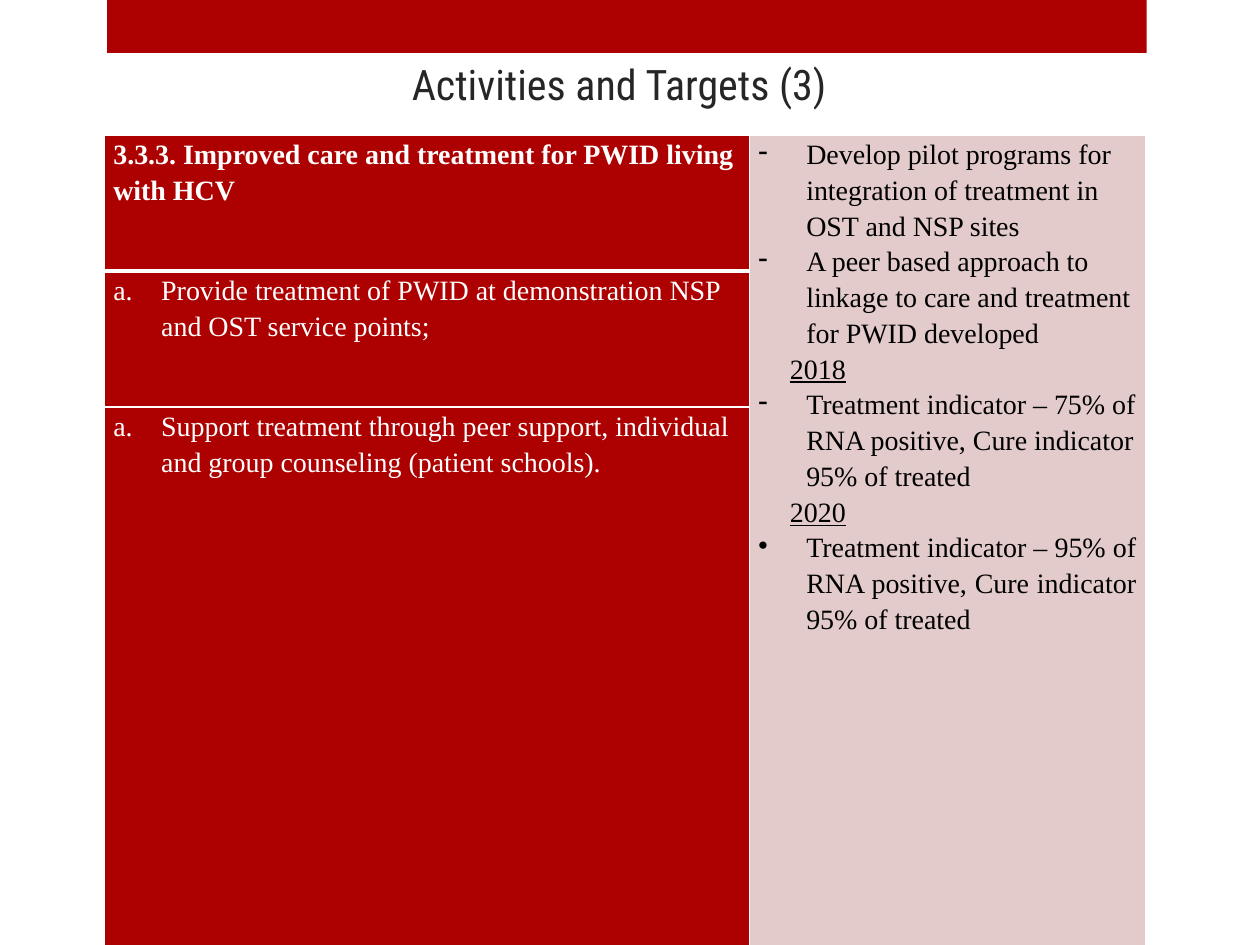
from dataclasses import dataclass

from lxml import etree
from pptx import Presentation
from pptx import util as u
from pptx.dml.color import RGBColor
from pptx.enum import shapes, text
from pptx.oxml.ns import qn


@dataclass(frozen=True)
class Theme:
    red: str = "AD0101"
    pink: str = "E3CBCB"
    white: str = "FFFFFF"
    black: str = "000000"
    title_ink: str = "262626"
    title_font: str = "Roboto Condensed"
    body_font: str = "Times New Roman"
    title_size: int = 24
    body_size: int = 16
    line_spacing: float = 1.15


THEME = Theme()

# Content: each paragraph is (style, words)
TITLE = "Activities and Targets (3)"
ACTIVITIES = [
    ("heading", "3.3.3. Improved care and treatment for PWID living with HCV"),
    ("letter", "Provide treatment of PWID at demonstration NSP and OST service points;"),
    ("letter", "Support treatment through peer support, individual and group counseling "
               "(patient schools)."),
]
TARGETS = [
    ("dash", "Develop pilot programs for integration of treatment in OST and NSP sites"),
    ("dash", "A peer based approach to linkage to care and treatment for PWID developed"),
    ("year", "2018"),
    ("dash", "Treatment indicator – 75% of RNA positive, Cure indicator 95% of treated"),
    ("year", "2020"),
    ("dot", "Treatment indicator – 95% of RNA positive, Cure indicator 95% of treated"),
]

# Paragraph styles: left margin, first-line indent, bullet tag and attributes
STYLES = {
    "heading": (0, 0, None),
    "year": (0.25, 0, None),
    "letter": (0.38, -0.38, ("a:buAutoNum", {"type": "alphaLcPeriod"})),
    "dash": (0.38, -0.38, ("a:buChar", {"char": "-"})),
    "dot": (0.38, -0.38, ("a:buChar", {"char": "•"})),
}

# Layout in inches
SLIDE_WIDTH, SLIDE_HEIGHT = 10, 7.5
BAND = (0.85, 0, 8.25, 0.42)
TITLE_BOX = (0.98, 0.36, 7.87, 0.55)
TABLE_LEFT, TABLE_TOP = 0.83, 1.07
COLUMNS = (5.12, 3.14)
ROWS = (1.08, 1.08, 3.36)
CELL_MARGIN = 0.07
THIN, THICK = 1, 3


def inches(box):
    return [u.Inches(length) for length in box]


def add_words(paragraph, words, font, size, color):
    run = paragraph.add_run()
    run.text = words
    run.font.name = font
    run.font.size = u.Pt(size)
    run.font.color.rgb = RGBColor.from_string(color)
    return run


def write_paragraph(paragraph, style, words, color):
    margin, indent, bullet = STYLES[style]
    paragraph.line_spacing = THEME.line_spacing
    if style == "dot":
        paragraph.alignment = text.PP_ALIGN.JUSTIFY
    properties = paragraph._p.get_or_add_pPr()
    properties.set("marL", str(u.Inches(margin)))
    properties.set("indent", str(u.Inches(indent)))
    if bullet:
        tag, attributes = bullet
        etree.SubElement(properties, qn(tag), attributes)
    run = add_words(paragraph, words, THEME.body_font, THEME.body_size, color)
    run.font.bold = style == "heading"
    run.font.underline = style == "year"


def draw_borders(cell, top, bottom):
    properties = cell._tc.get_or_add_tcPr()
    for side, width in zip("LRTB", (THIN, THIN, top, bottom)):
        line = etree.SubElement(properties, qn(f"a:ln{side}"), w=str(u.Pt(width)))
        fill = etree.SubElement(line, qn("a:solidFill"))
        etree.SubElement(fill, qn("a:srgbClr"), val=THEME.white)


def fill_cell(cell, paragraphs, background, ink, top=THIN, bottom=THIN):
    draw_borders(cell, top, bottom)
    cell.fill.solid()
    cell.fill.fore_color.rgb = RGBColor.from_string(background)
    cell.margin_left = cell.margin_right = u.Inches(CELL_MARGIN)
    cell.margin_top = cell.margin_bottom = 0
    frame = cell.text_frame
    for number, (style, words) in enumerate(paragraphs):
        paragraph = frame.add_paragraph() if number else frame.paragraphs[0]
        write_paragraph(paragraph, style, words, ink)


def add_band(slide):
    band = slide.shapes.add_shape(shapes.MSO_SHAPE.RECTANGLE, *inches(BAND))
    band.shadow.inherit = False
    band.fill.solid()
    band.fill.fore_color.rgb = RGBColor.from_string(THEME.red)
    band.line.fill.background()


def add_title(slide):
    frame = slide.shapes.add_textbox(*inches(TITLE_BOX)).text_frame
    frame.word_wrap = True
    frame.vertical_anchor = text.MSO_ANCHOR.BOTTOM
    heading = frame.paragraphs[0]
    heading.alignment = text.PP_ALIGN.CENTER
    add_words(heading, TITLE, THEME.title_font, THEME.title_size, THEME.title_ink)


def add_plan(slide):
    box = (TABLE_LEFT, TABLE_TOP, sum(COLUMNS), sum(ROWS))
    plan = slide.shapes.add_table(len(ROWS), len(COLUMNS), *inches(box)).table
    plan.first_row = plan.horz_banding = False
    for column, width in zip(plan.columns, COLUMNS):
        column.width = u.Inches(width)
    for row, height in zip(plan.rows, ROWS):
        row.height = u.Inches(height)

    # Activities run down the left; a thick rule closes the heading row
    for row, activity in enumerate(ACTIVITIES):
        fill_cell(plan.cell(row, 0), [activity], THEME.red, THEME.white,
                  top=THICK if row == 1 else THIN,
                  bottom=THICK if row == 0 else THIN)

    # Targets share one tall cell on the right
    targets = plan.cell(0, 1)
    targets.merge(plan.cell(len(ROWS) - 1, 1))
    fill_cell(targets, TARGETS, THEME.pink, THEME.black, bottom=THICK)


def main():
    deck = Presentation()
    deck.slide_width, deck.slide_height = inches((SLIDE_WIDTH, SLIDE_HEIGHT))
    slide = deck.slides.add_slide(deck.slide_layouts[6])
    add_band(slide)
    add_title(slide)
    add_plan(slide)
    deck.save("out.pptx")


if __name__ == "__main__":
    main()
